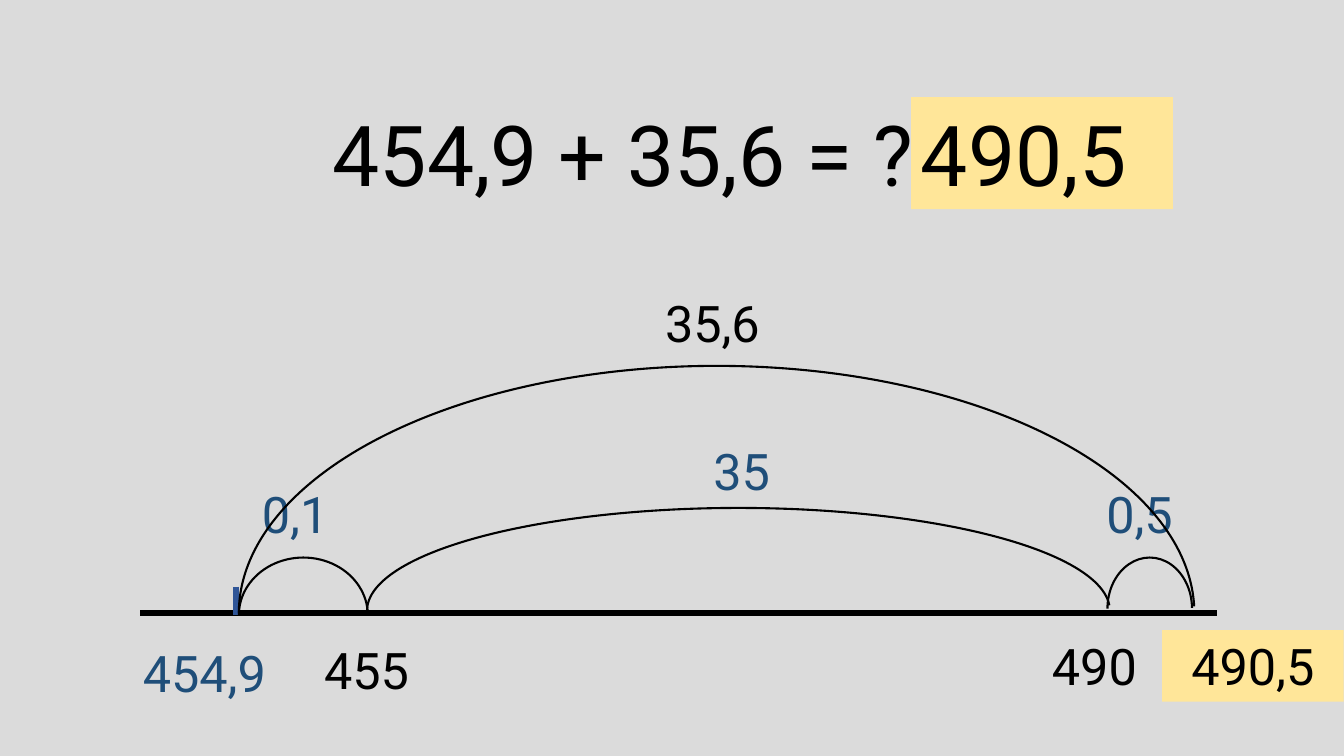
from dataclasses import dataclass

import pptx
import pptx.dml.color
import pptx.enum.shapes
import pptx.enum.text
import pptx.util
from lxml import etree

Cm = pptx.util.Cm
Shape = pptx.enum.shapes.MSO_SHAPE
Align = pptx.enum.text.PP_ALIGN


@dataclass(frozen=True)
class Theme:
    font: str = "Roboto"
    background: str = "DBDBDB"
    ink: str = "000000"
    step: str = "1F4E79"
    tick: str = "2F5597"
    answer: str = "FFE699"
    equation_size: int = 60
    label_size: int = 36
    arc_width: float = 1.5
    axis_width: float = 4.5


THEME = Theme()


def rgb(value):
    return pptx.dml.color.RGBColor.from_string(value)


def apply(target, formats):
    for name, value in formats.items():
        setattr(target, name, value)


def place(shape, left, top, width, height):
    apply(shape, {"left": Cm(left), "top": Cm(top),
                  "width": Cm(width), "height": Cm(height)})


def write(shape, text, size, color=THEME.ink, align=Align.LEFT):
    frame = shape.text_frame
    apply(frame, {"word_wrap": True,
                  "auto_size": pptx.enum.text.MSO_AUTO_SIZE.NONE,
                  "vertical_anchor": pptx.enum.text.MSO_ANCHOR.TOP})
    para = frame.paragraphs[0]
    para.alignment = align
    span = para.add_run()
    span.text = text
    apply(span.font, {"name": THEME.font, "size": pptx.util.Pt(size)})
    span.font.color.rgb = rgb(color)


def add_label(page, text, left, top, width, height, size=THEME.label_size,
              color=THEME.ink, align=Align.LEFT, fill=None):
    box = page.shapes.add_textbox(Cm(left), Cm(top), Cm(width), Cm(height))
    if fill:
        box.fill.solid()
        box.fill.fore_color.rgb = rgb(fill)
    write(box, text, size, color, align)


def add_arc(page, left, top, width, height):
    """Draw the upper half of an ellipse that fills the given box."""
    arc = page.shapes.add_shape(Shape.ARC, Cm(left), Cm(top), Cm(width), Cm(height))
    arc.adjustments[0] = 108
    arc.adjustments[1] = 215.5
    arc.shadow.inherit = False
    arc.fill.background()
    arc.line.color.rgb = rgb(THEME.ink)
    arc.line.width = pptx.util.Pt(THEME.arc_width)


def add_line(page, start, end, color):
    line = page.shapes.add_connector(
        pptx.enum.shapes.MSO_CONNECTOR.STRAIGHT, *map(Cm, (*start, *end)))
    line.line.color.rgb = rgb(color)
    line.line.width = pptx.util.Pt(THEME.axis_width)
    etree.SubElement(line._element.spPr, pptx.oxml.ns.qn("a:effectLst"))


def add_equation(page, left, top, height):
    title = page.shapes.title
    place(title, left, top, 17.32, height)
    write(title, "454,9 + 35,6 = ?", THEME.equation_size)
    add_label(page, "490,5", left + 14.83, top, 6.6, height,
              size=THEME.equation_size, fill=THEME.answer)


def add_number_line(page, left, top, width):
    axis = top + 8.2
    label_height = 1.8
    arcs = [
        (2.49, 6.81, 3.25, 2.9),
        (5.72, 5.56, 18.72, 5.18),
        (24.38, 6.81, 2.13, 2.57),
        (2.49, 1.98, 24.08, 12.47),
    ]
    step = {"color": THEME.step}
    centered = {"align": Align.CENTER}
    labels = [
        ("35,6", 12.98, 0, 3.3, {}),
        ("0,1", 2.82, 4.8, 2.67, step),
        ("35", 13.89, 3.73, 2.54, step | centered),
        ("0,5", 24.1, 4.8, 2.87, step),
        ("454,9", -0.18, 8.81, 4.06, step),
        ("455", 4.39, 8.74, 2.92, {}),
        ("490", 22.73, 8.64, 3.05, {}),
        ("490,5", 25.76, 8.64, 4.57, centered | {"fill": THEME.answer}),
    ]
    for text, x, y, label_width, formats in labels:
        add_label(page, text, left + x, top + y, label_width, label_height, **formats)
    add_line(page, (left, axis), (left + width, axis), THEME.ink)
    start = left + 2.41
    add_line(page, (start, axis - 0.66), (start, axis + 0.05), THEME.tick)
    for x, y, arc_width, arc_height in arcs:
        add_arc(page, left + x, top + y, arc_width, arc_height)


def main():
    deck = pptx.Presentation()
    apply(deck, {"slide_width": Cm(33.87), "slide_height": Cm(19.05)})
    page = deck.slides.add_slide(deck.slide_layouts.get_by_name("Title Only"))
    page.background.fill.solid()
    page.background.fill.fore_color.rgb = rgb(THEME.background)
    add_equation(page, left=8.13, top=2.45, height=2.82)
    add_number_line(page, left=3.53, top=7.24, width=27.13)
    deck.save("out.pptx")


if __name__ == "__main__":
    main()
